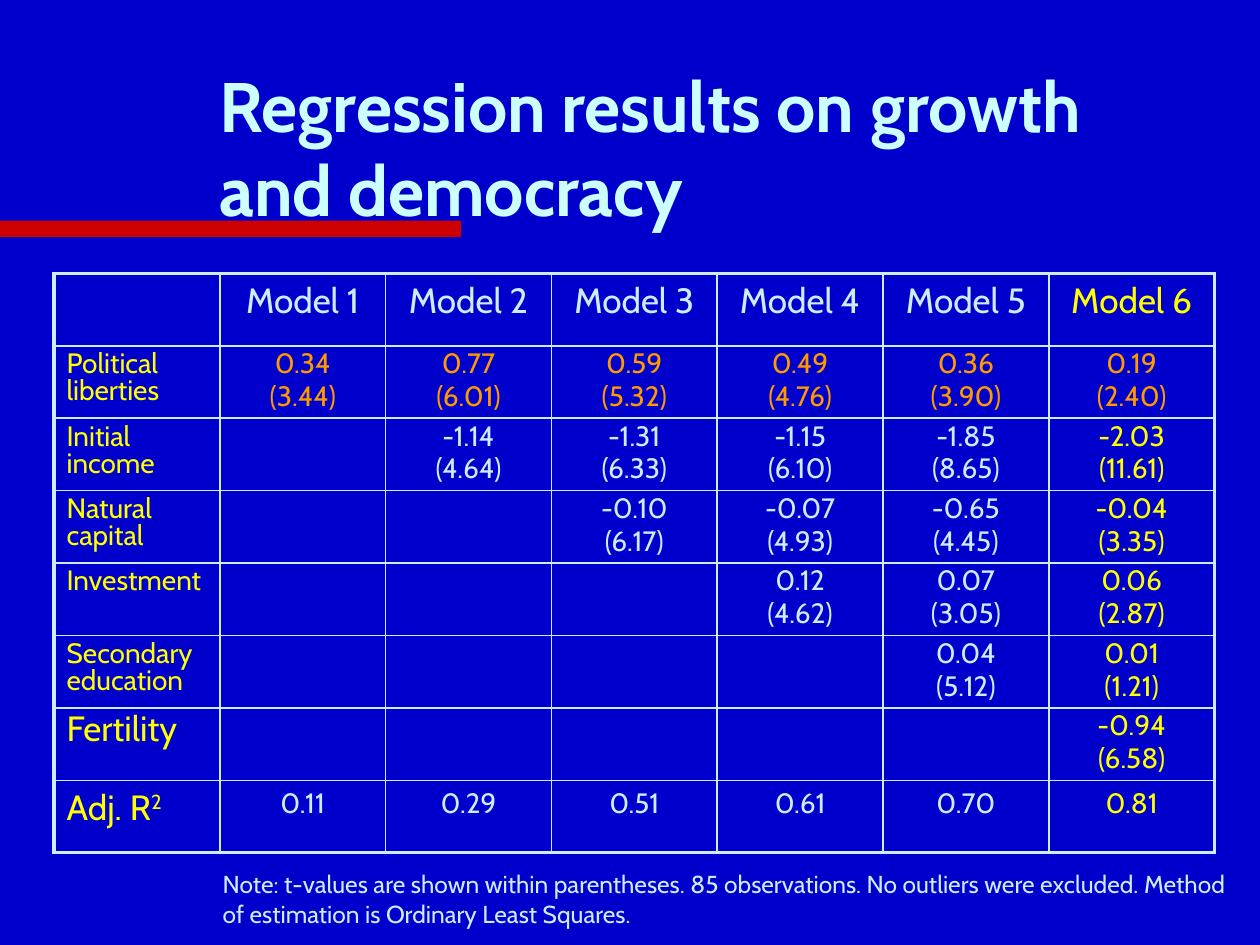
import dataclasses

import lxml.etree
import pptx
import pptx.dml.color
import pptx.enum.shapes
import pptx.enum.text
import pptx.oxml.ns
import pptx.util

Cm = pptx.util.Cm
Pt = pptx.util.Pt
ALIGN = pptx.enum.text.PP_ALIGN

FONT = "Cabin"
BLUE, RED, ORANGE, YELLOW = "0000CC", "CC0000", "FF9900", "FFFF00"
PALE, CYAN = "CCECFF", "CCFFFF"
MODEL_COUNT = 6
THIN, THICK = 1, 2.25


@dataclasses.dataclass
class ResultRow:
    label: str
    values: list[str]
    label_size: int = 16
    value_size: int = 16
    spacing: float | None = 0.8
    color: str = PALE
    last_color: str = YELLOW
    superscript: str = ""


ROWS = [
    ResultRow("", [f"Model {number + 1}" for number in range(MODEL_COUNT)],
              value_size=20, spacing=None),
    ResultRow("Political liberties",
              ["0.34\n(3.44)", "0.77\n(6.01)", "0.59\n(5.32)",
               "0.49\n(4.76)", "0.36\n(3.90)", "0.19\n(2.40)"],
              color=ORANGE, last_color=ORANGE),
    ResultRow("Initial income",
              ["-1.14\n(4.64)", "-1.31\n(6.33)", "-1.15\n(6.10)",
               "-1.85\n(8.65)", "-2.03\n(11.61)"]),
    ResultRow("Natural capital",
              ["-0.10\n(6.17)", "-0.07\n(4.93)", "-0.65\n(4.45)", "-0.04\n(3.35)"]),
    ResultRow("Investment", ["0.12\n(4.62)", "0.07\n(3.05)", "0.06\n(2.87)"]),
    ResultRow("Secondary education", ["0.04\n(5.12)", "0.01\n(1.21)"]),
    ResultRow("Fertility", ["-0.94\n(6.58)"], label_size=20),
    ResultRow("Adj. R", ["0.11", "0.29", "0.51", "0.61", "0.70", "0.81"],
              label_size=20, spacing=None, superscript="2"),
]


def rgb(color: str) -> pptx.dml.color.RGBColor:
    return pptx.dml.color.RGBColor.from_string(color)


def write_text(frame, text: str, *, size: float, color: str, bold: bool = False,
               align=ALIGN.LEFT, spacing: float | None = None,
               superscript: str = "") -> None:
    """Fill a text frame, one paragraph for each line of text."""
    for index, line in enumerate(text.split("\n")):
        paragraph = frame.add_paragraph() if index else frame.paragraphs[0]
        paragraph.alignment = align
        paragraph.line_spacing = spacing
        if index:
            paragraph.space_before = Pt(0.2 * size)
        paragraph.add_run().text = line
        if superscript:
            raised = paragraph.add_run()
            raised.text = superscript
            raised.font._element.set("baseline", "30000")
        for run in paragraph.runs:
            run.font.name = FONT
            run.font.size = Pt(size)
            run.font.bold = bold
            run.font.color.rgb = rgb(color)


def set_borders(cell, widths: dict[str, float]) -> None:
    properties = cell._tc.get_or_add_tcPr()
    qn = pptx.oxml.ns.qn
    for side, width in widths.items():
        line = lxml.etree.SubElement(properties, qn(f"a:ln{side}"), w=str(Pt(width)))
        fill = lxml.etree.SubElement(line, qn("a:solidFill"))
        lxml.etree.SubElement(fill, qn("a:srgbClr"), val=PALE)


def add_results_table(slide, rows: list[ResultRow]) -> None:
    column_count = MODEL_COUNT + 1
    width, height = Cm(23.4), Cm(11.68)
    table = slide.shapes.add_table(len(rows), column_count,
                                   Cm(1.09), Cm(5.51), width, height).table
    table.first_row = table.horz_banding = False
    for column in table.columns:
        column.width = width // column_count
    for table_row in table.rows:
        table_row.height = height // len(rows)

    last_row, last_column = len(rows) - 1, column_count - 1
    for row_index, row in enumerate(rows):
        missing = [""] * (MODEL_COUNT - len(row.values))
        for column_index, text in enumerate([row.label, *missing, *row.values]):
            cell = table.cell(row_index, column_index)
            set_borders(cell, {
                "L": THIN if column_index else THICK,
                "R": THICK if column_index == last_column else THIN,
                "T": THIN if row_index else THICK,
                "B": THICK if row_index == last_row else THIN,
            })
            cell.fill.background()
            if not text:
                continue
            if column_index == 0:
                write_text(cell.text_frame, text, size=row.label_size, color=YELLOW,
                           spacing=row.spacing, superscript=row.superscript)
            else:
                color = row.last_color if column_index == last_column else row.color
                write_text(cell.text_frame, text, size=row.value_size, color=color,
                           align=ALIGN.CENTER, spacing=row.spacing)


def add_accent_bar(slide) -> None:
    bar = slide.shapes.add_shape(pptx.enum.shapes.MSO_SHAPE.RECTANGLE,
                                 0, Cm(4.45), Cm(9.3), Cm(0.33))
    bar.shadow.inherit = False
    bar.fill.solid()
    bar.fill.fore_color.rgb = rgb(RED)
    bar.line.fill.background()


def add_title(slide) -> None:
    title = slide.shapes.title
    title.left, title.top = Cm(4.17), Cm(1.6)
    title.width, title.height = Cm(18.34), Cm(3.18)
    frame = title.text_frame
    frame.word_wrap = True
    frame.auto_size = pptx.enum.text.MSO_AUTO_SIZE.NONE
    frame.vertical_anchor = pptx.enum.text.MSO_ANCHOR.BOTTOM
    write_text(frame, "Regression results on growth and democracy",
               size=40, color=CYAN, bold=True)


def add_note(slide) -> None:
    note = slide.shapes.add_textbox(Cm(4.24), Cm(17.4), Cm(21.11), Cm(1.45))
    note.text_frame.word_wrap = True
    write_text(note.text_frame,
               "Note: t-values are shown within parentheses. 85 observations. "
               "No outliers were excluded. Method of estimation is Ordinary "
               "Least Squares.", size=14, color=PALE)


def main() -> None:
    presentation = pptx.Presentation()
    presentation.slide_width, presentation.slide_height = Cm(25.4), Cm(19.05)
    title_only = presentation.slide_layouts.get_by_name("Title Only")
    slide = presentation.slides.add_slide(title_only)
    slide.background.fill.solid()
    slide.background.fill.fore_color.rgb = rgb(BLUE)

    add_accent_bar(slide)
    # The title is drawn over the bar.
    slide.shapes._spTree.append(slide.shapes.title._element)
    add_title(slide)
    add_results_table(slide, ROWS)
    add_note(slide)
    presentation.save("out.pptx")


if __name__ == "__main__":
    main()
